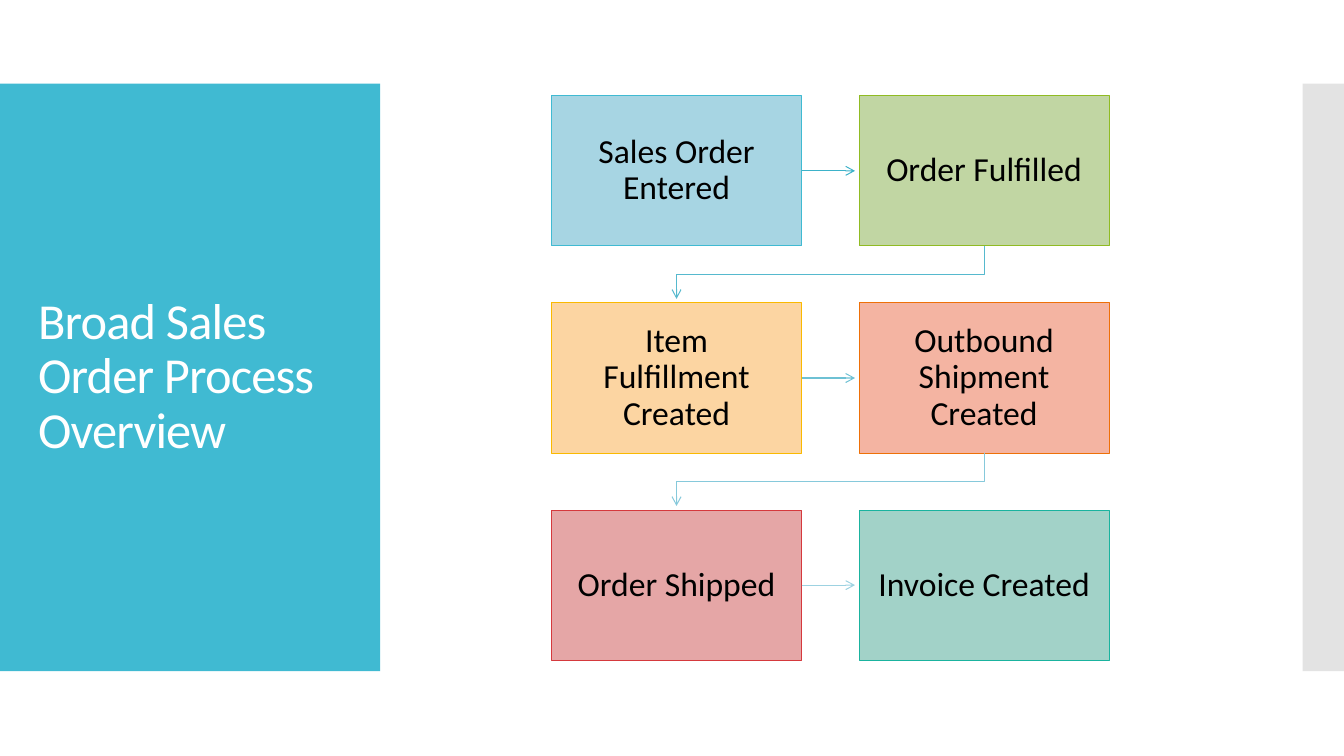
from lxml.etree import SubElement
from pptx import Presentation
from pptx.dml.color import RGBColor
from pptx.enum.shapes import MSO_CONNECTOR, MSO_SHAPE
from pptx.enum.text import MSO_ANCHOR, PP_ALIGN
from pptx.oxml.ns import qn
from pptx.util import Inches, Pt

TITLE = "Broad Sales Order Process Overview"
# text, fill, outline, colour of the arrow to the next step
STEPS = [
    ("Sales Order Entered", "A7D5E3", "40BAD2", "3DB2C9"),
    ("Order Fulfilled", "C1D6A3", "90BB23", "56B9CE"),
    ("Item Fulfillment Created", "FCD5A2", "FAB900", "6EC1D4"),
    ("Outbound Shipment Created", "F4B4A2", "EE7008", "86C9DB"),
    ("Order Shipped", "E5A6A6", "D5393D", "9DD2E1"),
    ("Invoice Created", "A2D2C8", "1AB39F", None),
]
COLORS = {"panel": "40BAD2", "strip": "C8C8C8", "title": "FFFFFF", "step": "000000"}
FONT = "Calibri"
COLS = 2
LEFT, TOP = 5.47, 0.95
WIDTH, HEIGHT = 2.48, 1.49
STEP_X, STEP_Y = 3.05, 2.055
GAP = 0.04  # space between an arrowhead and its box
BAND_Y, BAND_H = 0.83, 5.83

deck = Presentation()
deck.slide_width, deck.slide_height = Inches(13.33), Inches(7.5)
slide = deck.slides.add_slide(deck.slide_layouts[6])
shapes = slide.shapes


def add_box(x, y, w, h, fill, line=None):
    box = shapes.add_shape(MSO_SHAPE.RECTANGLE, *map(Inches, (x, y, w, h)))
    box.shadow.inherit = False
    box.fill.solid()
    box.fill.fore_color.rgb = RGBColor.from_string(fill)
    if line:
        box.line.color.rgb = RGBColor.from_string(line)
        box.line.width = Pt(0.75)
    else:
        box.line.fill.background()
    return box


def write(shape, text, size, color, align, inset):
    frame = shape.text_frame
    sides = {f"margin_{side}": Inches(inset) for side in ("left", "right", "top", "bottom")}
    look = {"word_wrap": True, "vertical_anchor": MSO_ANCHOR.MIDDLE, **sides}
    for key, value in look.items():
        setattr(frame, key, value)
    para = frame.paragraphs[0]
    para.alignment, para.line_spacing = align, 0.9
    run = para.add_run()
    run.text = text
    for key, value in {"name": FONT, "size": Pt(size)}.items():
        setattr(run.font, key, value)
    run.font.color.rgb = RGBColor.from_string(color)
    return run


def style_arrow(arrow, color):
    """Colour the line, give its end an open arrowhead and drop the shadow."""
    arrow.line.color.rgb = RGBColor.from_string(color)
    arrow.line.width = Pt(0.75)
    props = arrow.element.spPr
    SubElement(props.find(qn("a:ln")), qn("a:tailEnd"), type="arrow")
    if props.find(qn("a:effectLst")) is None:
        SubElement(props, qn("a:effectLst"))


def add_across(box, x, y, color):
    mid = Inches(y + HEIGHT / 2)
    arrow = shapes.add_connector(MSO_CONNECTOR.STRAIGHT, Inches(x + WIDTH), mid,
                                 Inches(x + STEP_X - GAP), mid)
    arrow.begin_connect(box, 3)
    style_arrow(arrow, color)


def add_return(x, y, color):
    """Draw the bent arrow from the last box of a row to the first of the next."""
    start, end = x + WIDTH / 2, LEFT + WIDTH / 2
    low, high = y + HEIGHT, y + STEP_Y
    turn = (low + high) / 2
    points = [(start, turn), (end, turn), (end, high - GAP)]
    path = shapes.build_freeform(Inches(start), Inches(low))
    path.add_line_segments([(Inches(a), Inches(b)) for a, b in points], close=False)
    arrow = path.convert_to_shape()
    arrow.fill.background()
    arrow.shadow.inherit = False
    style_arrow(arrow, color)


add_box(0, BAND_Y, 3.77, BAND_H, COLORS["panel"])
strip = add_box(12.92, BAND_Y, 0.41, BAND_H, COLORS["strip"])
tint = strip.element.spPr.find(qn("a:solidFill")).find(qn("a:srgbClr"))
SubElement(tint, qn("a:alpha"), val="50000")

title = shapes.add_textbox(*map(Inches, (0.28, 1.23, 3.22, 5.03)))
run = write(title, TITLE, 36, COLORS["title"], PP_ALIGN.LEFT, 0.1)
run.font._element.set("spc", "-60")

for i, (text, fill, line, color) in enumerate(STEPS):
    row, col = divmod(i, COLS)
    x, y = LEFT + col * STEP_X, TOP + row * STEP_Y
    box = add_box(x, y, WIDTH, HEIGHT, fill, line)
    write(box, text, 24, COLORS["step"], PP_ALIGN.CENTER, 0.19)
    if color and col < COLS - 1:
        add_across(box, x, y, color)
    elif color:
        add_return(x, y, color)

deck.save("out.pptx")
